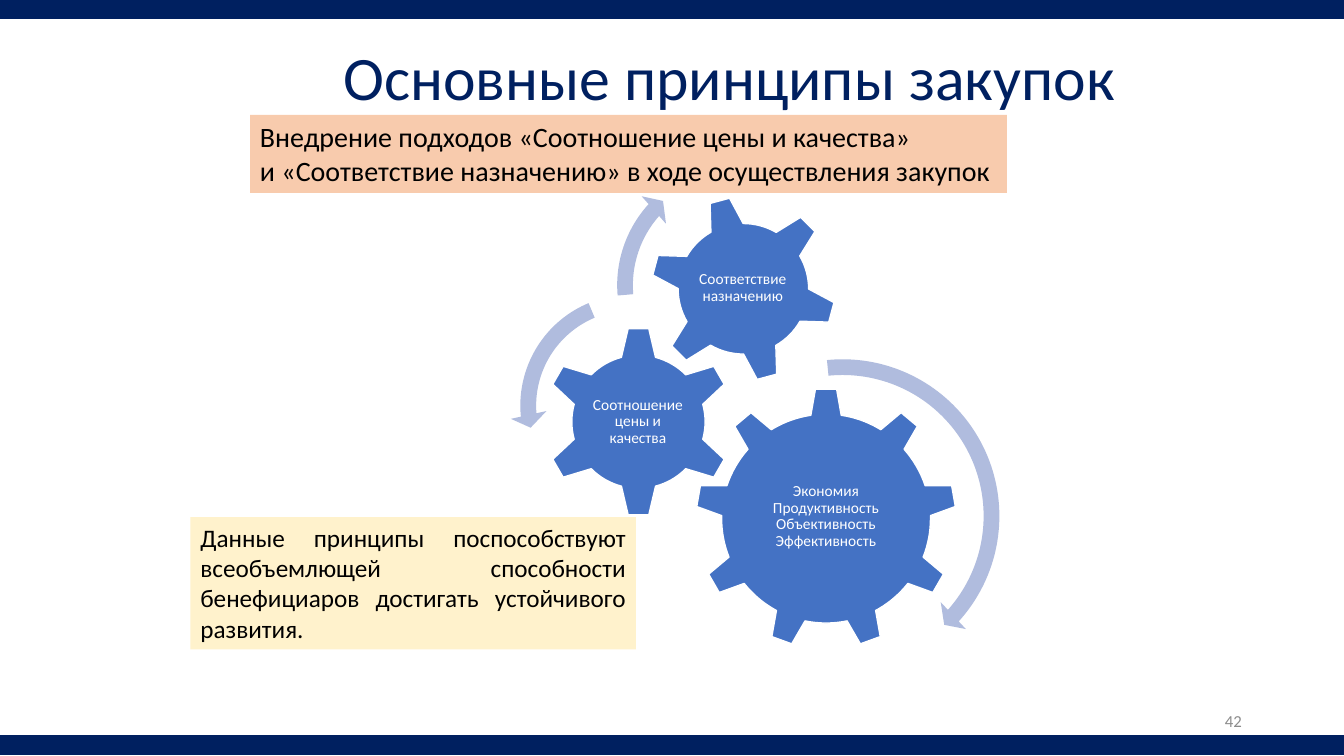
from pptx import Presentation
from pptx.dml.color import RGBColor
from pptx.enum.shapes import MSO_SHAPE
from pptx.enum.text import MSO_ANCHOR, PP_ALIGN
from pptx.util import Pt

NAVY, BLUE, LAVENDER, WHITE, BLACK = "002060", "4472C4", "B0BCDE", "FFFFFF", "000000"

deck = Presentation()
deck.slide_width, deck.slide_height = Pt(960), Pt(540)
page = deck.slides.add_slide(deck.slide_layouts[6])


def add_figure(kind, place, fill, line=None):
    figure = page.shapes.add_shape(kind, *[Pt(length) for length in place])
    figure.shadow.inherit = False
    figure.fill.solid()
    figure.fill.fore_color.rgb = RGBColor.from_string(fill)
    if line:
        figure.line.color.rgb = RGBColor.from_string(line)
        figure.line.width = Pt(1)
    else:
        figure.line.fill.background()
    return figure


def write(box, text, size, color, align, anchor=MSO_ANCHOR.MIDDLE, spacing=1.0):
    frame = box.text_frame
    frame.word_wrap = True
    frame.vertical_anchor = anchor
    frame.text = text
    for para in frame.paragraphs:
        para.alignment = align
        para.line_spacing = spacing
        for span in para.runs:
            span.font.name = "Calibri"
            span.font.size = Pt(size)
            span.font.color.rgb = RGBColor.from_string(color)
    return frame


for bar_top in (525.6, 0):
    add_figure(MSO_SHAPE.RECTANGLE, (0, bar_top, 960, 13), NAVY, NAVY)

title = page.shapes.add_textbox(Pt(148.3), Pt(26.6), Pt(745.9), Pt(68.4))
title_frame = write(title, "Основные принципы закупок", 44.1, NAVY, PP_ALIGN.CENTER, spacing=0.9)
title_frame.margin_bottom = Pt(10.5)

gears = [
    (MSO_SHAPE.GEAR_9, (496.8, 277.2, 186.5, 186.5), 0,
     (534.2, 321.1, 111.6, 95.8), "Экономия Продуктивность Объективность Эффективность"),
    (MSO_SHAPE.GEAR_6, (388.1, 233.3, 136, 136), 0,
     (421.9, 267.8, 67.7, 67), "Соотношение цены и качества"),
    (MSO_SHAPE.GEAR_6, (464.4, 139.7, 133.2, 133.2), 345,
     (493.2, 168.5, 74.9, 74.9), "Соответствие назначению"),
]
for kind, place, rotation, label_place, text in gears:
    gear = add_figure(kind, place, BLUE, WHITE)
    gear.rotation = rotation
    label = page.shapes.add_textbox(*[Pt(length) for length in label_place])
    frame = write(label, text, 11, WHITE, PP_ALIGN.CENTER, spacing=0.9)
    frame.margin_left = frame.margin_right = Pt(1.4)
    frame.margin_top = frame.margin_bottom = Pt(1.4)

arrows = [
    (MSO_SHAPE.CIRCULAR_ARROW, (482.4, 249.1, 239, 239),
     (0.047, 2.99, 25.189, 158.553, 0.055)),
    (MSO_SHAPE.LEFT_CIRCULAR_ARROW, (364.3, 203, 173.5, 173.5),
     (0.065, 4.3, 104.891, 148.378, 0.075)),
    (MSO_SHAPE.CIRCULAR_ARROW, (433.4, 110.2, 187.2, 187.2),
     (0.06, 3.941, 133.138, 105.082, 0.07)),
]
for kind, place, bends in arrows:
    arrow = add_figure(kind, place, LAVENDER)
    for index, bend in enumerate(bends):
        arrow.adjustments[index] = bend

number = page.shapes.add_textbox(Pt(678.2), Pt(500.4), Pt(216), Pt(28.8))
write(number, "42", 12, "8C8C8C", PP_ALIGN.RIGHT)

approach = add_figure(MSO_SHAPE.RECTANGLE, (178.6, 82, 540.7, 55.7), "F8CBAD")
write(approach, "Внедрение подходов «Соотношение цены и качества»\n"
      "и «Соответствие назначению» в ходе осуществления закупок",
      20, BLACK, PP_ALIGN.LEFT, MSO_ANCHOR.TOP)

outcome = add_figure(MSO_SHAPE.RECTANGLE, (136, 369.4, 318.2, 94.5), "FFF2CC")
write(outcome, "Данные принципы поспособствуют всеобъемлющей способности "
      "бенефициаров достигать устойчивого развития.",
      18, BLACK, PP_ALIGN.JUSTIFY, MSO_ANCHOR.TOP)

deck.save("out.pptx")
